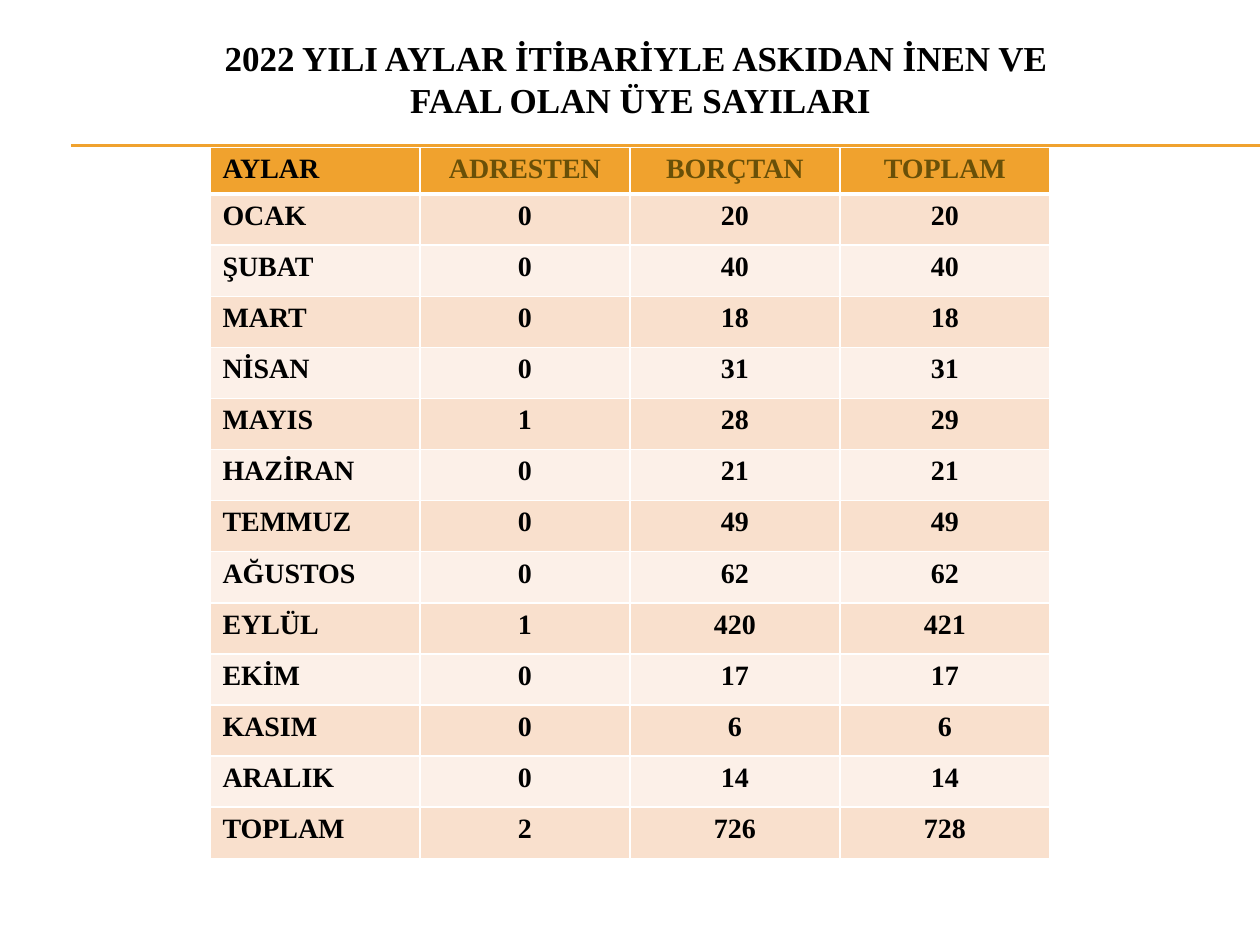
from dataclasses import dataclass

from lxml.etree import SubElement
from pptx import Presentation
from pptx.dml.color import RGBColor
from pptx.enum.shapes import MSO_CONNECTOR
from pptx.enum.text import MSO_ANCHOR, PP_ALIGN
from pptx.oxml.ns import qn
from pptx.util import Pt

FONT = "Times New Roman"
COLORS = {
    "text": "000000",
    "heading": "695008",
    "accent": "F0A22E",
    "odd_row": "F9E0CD",
    "even_row": "FCF0E8",
    "border": "FFFFFF",
}
TITLE = "2022 YILI AYLAR İTİBARİYLE ASKIDAN İNEN VE \vFAAL OLAN ÜYE SAYILARI"
HEADINGS = ("AYLAR", "ADRESTEN", "BORÇTAN", "TOPLAM")
COLUMN_WIDTH, HEADER_HEIGHT, ROW_HEIGHT = 120, 26.6, 29.2


@dataclass(frozen=True)
class Month:
    name: str
    address: int
    debt: int

    @property
    def cells(self) -> tuple[str, ...]:
        return self.name, str(self.address), str(self.debt), str(self.address + self.debt)


MONTHS = [
    Month("OCAK", 0, 20),
    Month("ŞUBAT", 0, 40),
    Month("MART", 0, 18),
    Month("NİSAN", 0, 31),
    Month("MAYIS", 1, 28),
    Month("HAZİRAN", 0, 21),
    Month("TEMMUZ", 0, 49),
    Month("AĞUSTOS", 0, 62),
    Month("EYLÜL", 1, 420),
    Month("EKİM", 0, 17),
    Month("KASIM", 0, 6),
    Month("ARALIK", 0, 14),
]
YEAR = Month("TOPLAM", sum(m.address for m in MONTHS), sum(m.debt for m in MONTHS))


def rgb(name: str) -> RGBColor:
    return RGBColor.from_string(COLORS[name])


def style_paragraph(paragraph, size: float, color: str, align: PP_ALIGN) -> None:
    paragraph.alignment = align
    paragraph.font.name = FONT
    paragraph.font.size = Pt(size)
    paragraph.font.bold = True
    paragraph.font.color.rgb = rgb(color)


def add_title(slide) -> None:
    frame = slide.shapes.add_textbox(Pt(24), Pt(11.5), Pt(684), Pt(66.2)).text_frame
    frame.word_wrap = True
    frame.vertical_anchor = MSO_ANCHOR.MIDDLE
    frame.text = TITLE
    style_paragraph(frame.paragraphs[0], 20, "text", PP_ALIGN.CENTER)


def add_rule(slide, y: float) -> None:
    rule = slide.shapes.add_connector(MSO_CONNECTOR.STRAIGHT, Pt(40.5), Pt(y), Pt(720), Pt(y))
    rule.line.color.rgb = rgb("accent")
    rule.line.width = Pt(0.75)
    SubElement(rule._element.spPr, qn("a:effectLst"))


def set_borders(cell, widths: dict[str, float]) -> None:
    """Draw the cell's borders; widths are in points, keyed by side L, R, T, B."""
    properties = cell._tc.get_or_add_tcPr()
    for side, width in widths.items():
        line = SubElement(properties, qn(f"a:ln{side}"), w=str(int(Pt(width))))
        fill = SubElement(line, qn("a:solidFill"))
        SubElement(fill, qn("a:srgbClr"), val=COLORS["border"])


def add_member_table(slide) -> None:
    rows = [HEADINGS, *(month.cells for month in MONTHS), YEAR.cells]
    heights = [HEADER_HEIGHT] + [ROW_HEIGHT] * (len(rows) - 1)
    table = slide.shapes.add_table(
        len(rows), len(HEADINGS), Pt(120), Pt(84.3),
        Pt(COLUMN_WIDTH * len(HEADINGS)), Pt(sum(heights)),
    ).table
    for column in table.columns:
        column.width = Pt(COLUMN_WIDTH)
    for r, (texts, height) in enumerate(zip(rows, heights)):
        table.rows[r].height = Pt(height)
        band = "accent" if r == 0 else "odd_row" if r % 2 else "even_row"
        for c, text in enumerate(texts):
            cell = table.cell(r, c)
            set_borders(cell, {"L": 1, "R": 1, "T": 3 if r == 1 else 1, "B": 3 if r == 0 else 1})
            cell.fill.solid()
            cell.fill.fore_color.rgb = rgb(band)
            cell.text = text
            style_paragraph(
                cell.text_frame.paragraphs[0], 16,
                "heading" if r == 0 and c > 0 else "text",
                PP_ALIGN.CENTER if c > 0 else PP_ALIGN.LEFT,
            )


def main() -> None:
    presentation = Presentation()
    presentation.slide_width, presentation.slide_height = Pt(720), Pt(540)
    slide = presentation.slides.add_slide(presentation.slide_layouts[6])
    for y in (82.8, 83.4):
        add_rule(slide, y)
    add_title(slide)
    add_member_table(slide)
    presentation.save("out.pptx")


if __name__ == "__main__":
    main()
